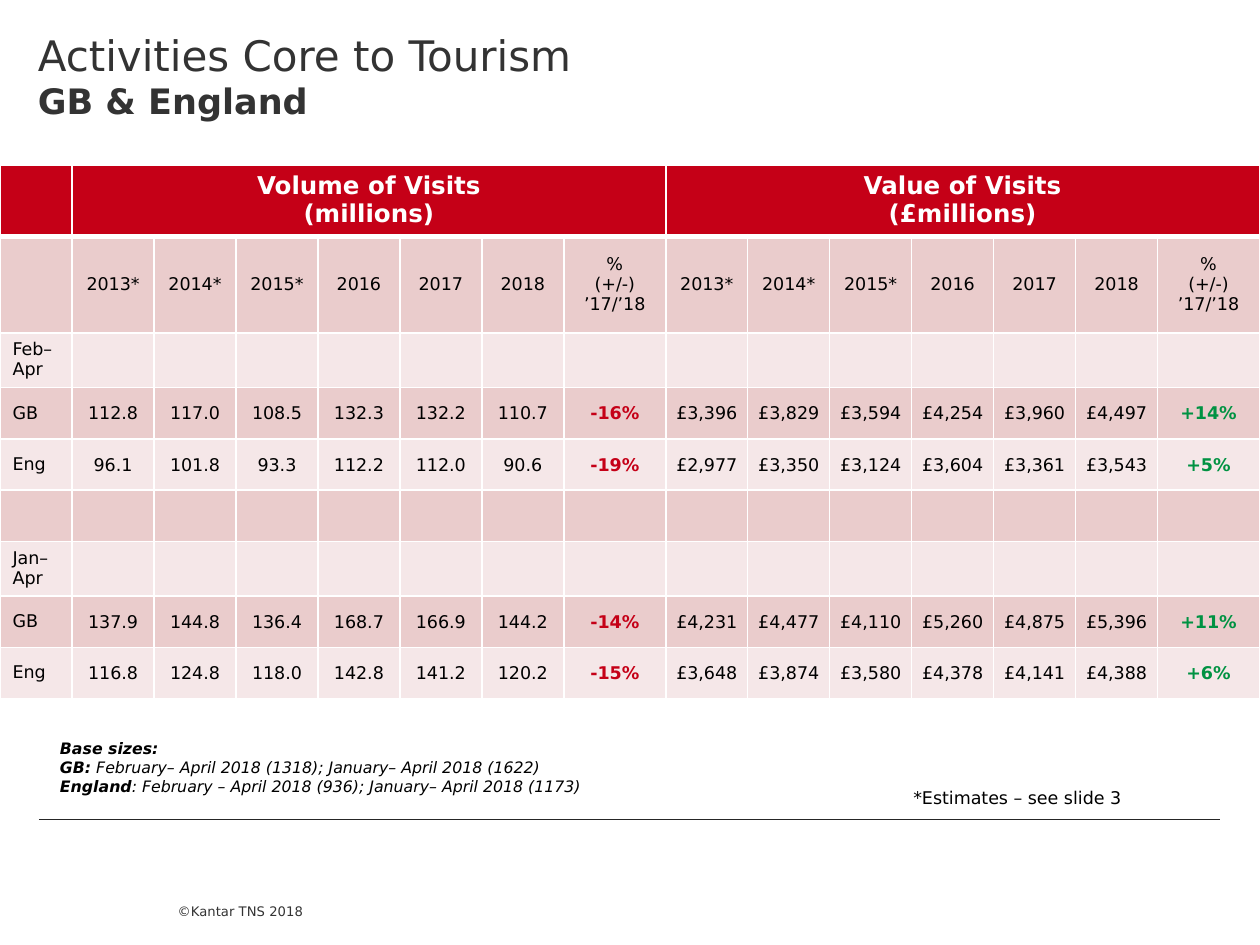
import pptx
import pptx.util
import pptx.dml.color
import pptx.enum.shapes
import pptx.enum.text
from lxml import etree

Pt = pptx.util.Pt
ANCHOR = pptx.enum.text.MSO_ANCHOR
ALIGN = pptx.enum.text.PP_ALIGN
AUTO = pptx.enum.text.MSO_AUTO_SIZE
NS = "http://schemas.openxmlformats.org/drawingml/2006/main"
FONT = "DejaVu Sans"
COLORS = {
    "red": "C50017", "green": "009242", "pink": "EACCCC", "pale": "F5E7E8",
    "white": "FFFFFF", "black": "000000", "grey": "333333", "rule": "262626",
}
YEARS = ["2013*", "2014*", "2015*", "2016", "2017", "2018", "%\n(+/-) ’17/’18"]
BLANK = [""] * 14
ROWS = [
    [""] + YEARS * 2,
    ["Feb– Apr"] + BLANK,
    ["GB", "112.8", "117.0", "108.5", "132.3", "132.2", "110.7", "-16%",
     "£3,396", "£3,829", "£3,594", "£4,254", "£3,960", "£4,497", "+14%"],
    ["Eng", "96.1", "101.8", "93.3", "112.2", "112.0", "90.6", "-19%",
     "£2,977", "£3,350", "£3,124", "£3,604", "£3,361", "£3,543", "+5%"],
    [""] + BLANK,
    ["Jan–Apr"] + BLANK,
    ["GB", "137.9", "144.8", "136.4", "168.7", "166.9", "144.2", "-14%",
     "£4,231", "£4,477", "£4,110", "£5,260", "£4,875", "£5,396", "+11%"],
    ["Eng", "116.8", "124.8", "118.0", "142.8", "141.2", "120.2", "-15%",
     "£3,648", "£3,874", "£3,580", "£4,378", "£4,141", "£4,388", "+6%"],
]
VALUE_MARGINS = (0.6, 0.6, 0.6, 0)
LABEL_MARGINS = (7.2, 3.6, 7.2, 3.6)


def rgb(name):
    return pptx.dml.color.RGBColor.from_string(COLORS[name])


def set_margins(target, margins):
    for side, value in zip(("left", "top", "right", "bottom"), margins):
        setattr(target, "margin_" + side, Pt(value))


def write(tf, paragraphs, size, color, align=ALIGN.LEFT):
    for i, runs in enumerate(paragraphs):
        p = tf.paragraphs[0] if i == 0 else tf.add_paragraph()
        p.alignment = align
        for text, extra in runs:
            if text == "\n":
                p.add_line_break()
                continue
            r = p.add_run()
            r.text = text
            for key, value in {"name": FONT, "size": Pt(size), "bold": False, **extra}.items():
                setattr(r.font, key, value)
            r.font.color.rgb = rgb(color)


def add_title(s):
    sp = s.shapes.title
    sp.left, sp.top, sp.width, sp.height = Pt(0), Pt(0), Pt(399.6), Pt(100.8)
    tf = sp.text_frame
    for key, value in {"word_wrap": True, "auto_size": AUTO.NONE, "vertical_anchor": ANCHOR.TOP}.items():
        setattr(tf, key, value)
    set_margins(tf, (21.6, 16.6, 21.6, 0))
    write(tf, [[("Activities Core to Tourism", {}), ("\n", {}),
                ("GB & England", {"size": Pt(20), "bold": True})]], 24, "grey")


def add_text(s, box, paragraphs, size, color, margins=LABEL_MARGINS, **frame):
    tf = s.shapes.add_textbox(*map(Pt, box)).text_frame
    for key, value in {"word_wrap": True, **frame}.items():
        setattr(tf, key, value)
    set_margins(tf, margins)
    write(tf, paragraphs, size, color)


def add_rule(s, x1, x2, y):
    line = s.shapes.add_connector(pptx.enum.shapes.MSO_CONNECTOR.STRAIGHT, Pt(x1), Pt(y), Pt(x2), Pt(y))
    line.line.color.rgb = rgb("rule")
    line.line.width = Pt(0.75)
    etree.SubElement(line._element.spPr, f"{{{NS}}}effectLst")


def style_cell(cell, fill, top=1, bottom=1):
    tcPr = cell._tc.get_or_add_tcPr()
    for side, width in {"L": 1, "R": 1, "T": top, "B": bottom}.items():
        ln = etree.SubElement(tcPr, f"{{{NS}}}ln{side}", w=str(Pt(width)))
        solid = etree.SubElement(ln, f"{{{NS}}}solidFill")
        etree.SubElement(solid, f"{{{NS}}}srgbClr", val=COLORS["white"])
    cell.fill.solid()
    cell.fill.fore_color.rgb = rgb(fill)


def fill_cell(cell, text, size, color, align, bold=False):
    if text:
        lines = [[(line, {"bold": bold})] for line in text.split("\n")]
        write(cell.text_frame, lines, size, color, align)


def add_header(table):
    for c in range(15):
        style_cell(table.cell(0, c), "red", bottom=3)
    for c, text in ((1, "Volume of Visits\n(millions)"), (8, "Value of Visits\n(£millions)")):
        table.cell(0, c).merge(table.cell(0, c + 6))
        fill_cell(table.cell(0, c), text, 14, "white", ALIGN.CENTER, True)


def add_body(table):
    for i, row in enumerate(ROWS):
        for c, text in enumerate(row):
            cell = table.cell(i + 1, c)
            style_cell(cell, "pale" if i % 2 else "pink", top=1 if i else 3)
            cell.vertical_anchor = ANCHOR.TOP if text == "Feb– Apr" else ANCHOR.MIDDLE
            set_margins(cell, VALUE_MARGINS if i and c and text else LABEL_MARGINS)
            change = text.startswith(("+", "-"))
            color = {"+": "green", "-": "red"}.get(text[:1], "black")
            fill_cell(cell, text, 10, color, ALIGN.CENTER if c else ALIGN.LEFT, change)


def add_visits_table(s):
    widths = [41.2] + ([46.85] * 6 + [58.3]) * 2
    heights = [40.8, 55.2, 31] + [29.3] * 6
    table = s.shapes.add_table(9, 15, Pt(0), Pt(94.2), Pt(sum(widths)), Pt(sum(heights))).table
    table.horz_banding = False
    for column, width in zip(table.columns, widths):
        column.width = Pt(width)
    for row, height in zip(table.rows, heights):
        row.height = Pt(height)
    add_header(table)
    add_body(table)


def main():
    prs = pptx.Presentation()
    prs.slide_width, prs.slide_height = Pt(720), Pt(540)
    s = prs.slides.add_slide(prs.slide_layouts[5])
    add_text(s, (101.5, 498.2, 98, 41.8), [[("©Kantar TNS 2018", {})]], 7.5, "grey",
             (0, 0, 0, 20.9), vertical_anchor=ANCHOR.BOTTOM)
    add_rule(s, 22.3, 697, 468.2)
    add_title(s)
    add_visits_table(s)
    italic = {"italic": True}
    strong = {"italic": True, "bold": True}
    add_text(s, (27.2, 418.5, 607.7, 40), [
        [("Base sizes:", strong), ("\n", {}), ("GB:", strong),
         (" February– April 2018 (1318); January– April 2018 (1622)", italic)],
        [("England", strong), (": February – April 2018 (936); January– April 2018 (1173)", italic)],
    ], 9, "black", auto_size=AUTO.SHAPE_TO_FIT_TEXT)
    add_text(s, (514.8, 446, 138.2, 19.4), [[("*Estimates – see slide 3", {})]], 10, "black",
             word_wrap=False, auto_size=AUTO.SHAPE_TO_FIT_TEXT)
    prs.save("out.pptx")


if __name__ == "__main__":
    main()
